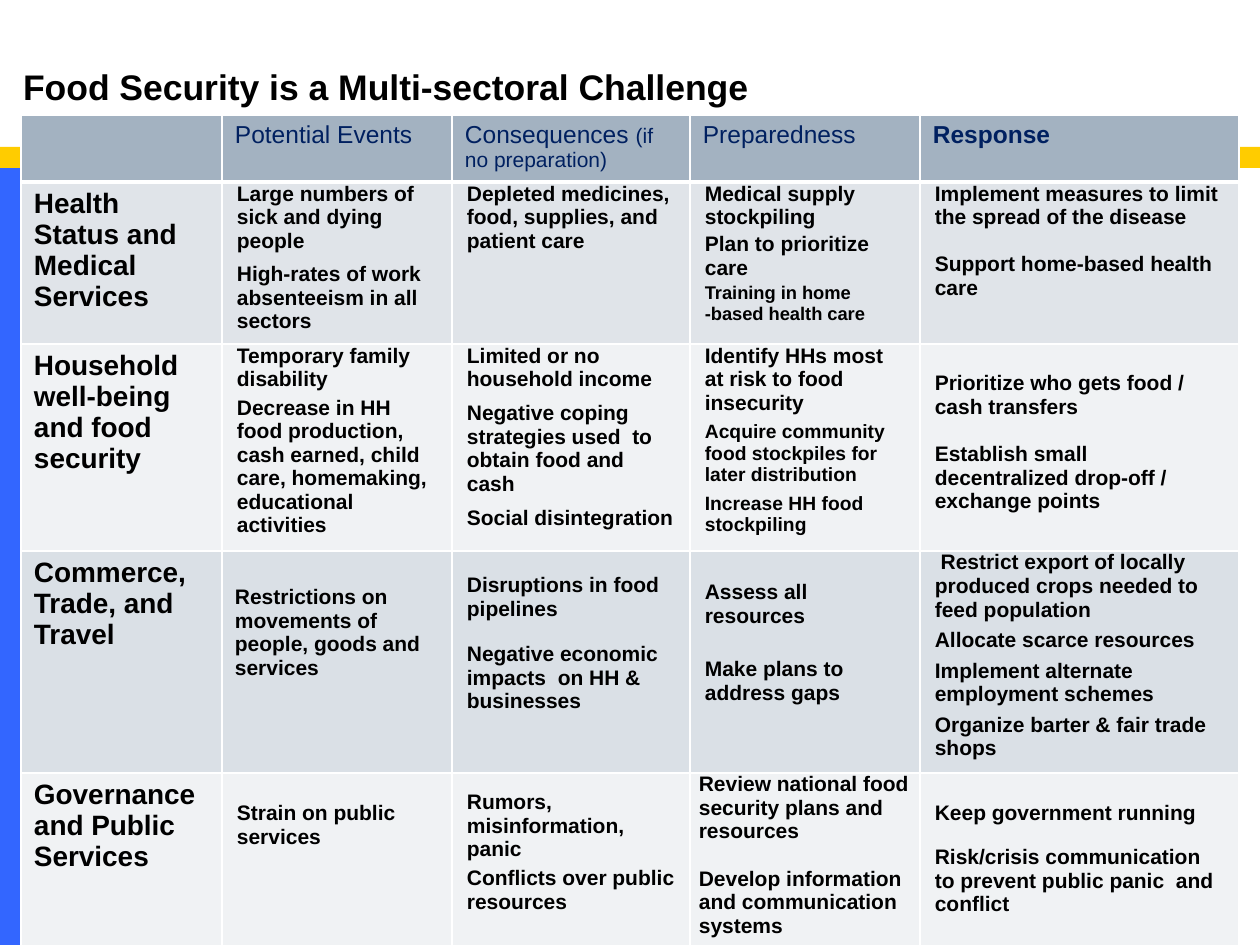
import dataclasses
import typing

import lxml.etree
import pptx
import pptx.dml.color
import pptx.enum.shapes
import pptx.enum.text
import pptx.oxml.ns
import pptx.util

EMU_PER_PX = 914400 / 126
FONT = "Arial"
BLACK, NAVY, WHITE = "000000", "002060", "FFFFFF"
HEADER_FILL = "A3B2C1"
COLUMN_WIDTHS = [201, 230, 238, 230, 319]
HEADER_HEIGHT = 67


@dataclasses.dataclass
class Entry:
    """The statements of one cell, with the gap between them in points."""

    statements: list[str]
    gap: float = 0
    top: int = 0
    side: int = 15
    sizes: tuple[float, ...] = (12, 12, 12, 12)


@dataclasses.dataclass
class Sector:
    """One row of the table."""

    name: str
    height: int
    fill: str
    entries: list[Entry]


@dataclasses.dataclass
class Heading:
    """One column heading."""

    label: str = ""
    remark: str = ""
    bold: bool = False


@dataclasses.dataclass
class Band:
    """One plain coloured bar of the background."""

    left: int
    top: int
    width: int
    height: int
    fill: str


BANDS = [Band(0, 147, 1260, 21, "FFCC00"), Band(0, 168, 21, 777, "3366FF")]

HEADINGS = [
    Heading(),
    Heading("Potential Events"),
    Heading("Consequences ", "(if no preparation)"),
    Heading("Preparedness"),
    Heading("Response", bold=True),
]

SECTORS = [
    Sector("Health Status and Medical Services", 162, "E0E4E9", [
        Entry(["Large numbers of sick and dying people",
               "High-rates of work absenteeism in all sectors"], 5.75),
        Entry(["Depleted medicines, food, supplies, and patient care"]),
        Entry(["Medical supply stockpiling", "Plan to prioritize care",
               "Training in home -based health care"], 2, sizes=(12, 12, 10.5)),
        Entry(["Implement measures to limit the spread of the disease",
               "Support home-based health care"], 13.5),
    ]),
    Sector("Household well-being and food security", 207, "F0F2F4", [
        Entry(["Temporary family disability",
               "Decrease in HH food production, cash earned, child care, "
               "homemaking, educational activities"], 3),
        Entry(["Limited or no household income",
               "Negative coping strategies used  to obtain food and cash",
               "Social disintegration"], 6),
        Entry(["Identify HHs most at risk to food insecurity",
               "Acquire community food stockpiles for later distribution",
               "Increase HH food stockpiling"], 4, sizes=(12, 11, 11)),
        Entry(["Prioritize who gets food / cash transfers",
               "Establish small decentralized drop-off / exchange points"], 13.5, top=28),
    ]),
    Sector("Commerce, Trade, and Travel", 222, "DAE0E6", [
        Entry(["Restrictions on movements of people, goods and services"], top=35, side=13),
        Entry(["Disruptions in food pipelines",
               "Negative economic  impacts  on HH & businesses"], 12.5, top=23),
        Entry(["Assess all resources", "Make plans to address gaps"], 17, top=30),
        Entry([" Restrict export of locally produced crops needed to feed population",
               "Allocate scarce resources", "Implement alternate employment schemes",
               "Organize barter & fair trade shops"], 4),
    ]),
    Sector("Governance and Public Services", 180, "F0F2F4", [
        Entry(["Strain on public services"], top=29),
        Entry(["Rumors, misinformation, panic", "Conflicts over public resources"], 3, top=18),
        Entry(["Review national food security plans and resources",
               "Develop information and communication systems"], 13.5, side=9),
        Entry(["Keep government running",
               "Risk/crisis communication to prevent public panic  and conflict"], 11.5, top=29),
    ]),
]


def px(length: int) -> int:
    """Turn pixels into EMU."""
    return round(length * EMU_PER_PX)


def color(value: str) -> pptx.dml.color.RGBColor:
    """Turn a hex string into a colour."""
    return pptx.dml.color.RGBColor.from_string(value)


def write(paragraph: typing.Any, text: str, *, size: float, fill: str = BLACK,
          bold: bool = True) -> None:
    """Add one formatted run to a paragraph."""
    run = paragraph.add_run()
    run.text = text
    run.font.name = FONT
    run.font.size = pptx.util.Pt(size)
    run.font.bold = bold
    run.font.color.rgb = color(fill)


def draw_band(slide: typing.Any, band: Band) -> None:
    """Draw one background bar."""
    bar = slide.shapes.add_shape(pptx.enum.shapes.MSO_SHAPE.RECTANGLE, px(band.left),
                                 px(band.top), px(band.width), px(band.height))
    bar.shadow.inherit = False
    bar.fill.solid()
    bar.fill.fore_color.rgb = color(band.fill)
    bar.line.fill.background()


def draw_title(slide: typing.Any, text: str) -> None:
    """Place and fill the title placeholder."""
    title = slide.shapes.title
    title.left, title.top, title.width, title.height = px(10), px(32), px(1103), px(84)
    frame = title.text_frame
    frame.word_wrap = True
    frame.auto_size = pptx.enum.text.MSO_AUTO_SIZE.NONE
    frame.vertical_anchor = pptx.enum.text.MSO_ANCHOR.BOTTOM
    frame.margin_left, frame.margin_bottom = px(13), px(8)
    frame.paragraphs[0].alignment = pptx.enum.text.PP_ALIGN.LEFT
    write(frame.paragraphs[0], text, size=20.3)


def style_cell(cell: typing.Any, fill: str, *, bottom: int = 1, side: int = 13,
               top: int = 6, foot: int = 6) -> None:
    """Set the borders, fill and margins of a cell."""
    properties = cell._tc.get_or_add_tcPr()
    for edge, width in {"lnL": 1, "lnR": 1, "lnT": 1, "lnB": bottom}.items():
        line = lxml.etree.SubElement(properties, pptx.oxml.ns.qn(f"a:{edge}"),
                                     w=str(pptx.util.Pt(width)))
        solid = lxml.etree.SubElement(line, pptx.oxml.ns.qn("a:solidFill"))
        lxml.etree.SubElement(solid, pptx.oxml.ns.qn("a:srgbClr"), val=WHITE)
    cell.fill.solid()
    cell.fill.fore_color.rgb = color(fill)
    cell.margin_left = cell.margin_right = px(side)
    cell.margin_top, cell.margin_bottom = px(top), px(foot)


def fill_heading(cell: typing.Any, heading: Heading) -> None:
    """Fill one cell of the header row."""
    style_cell(cell, HEADER_FILL, bottom=3)
    paragraph = cell.text_frame.paragraphs[0]
    for text, size in ((heading.label, 14), (heading.remark, 12)):
        if text:
            write(paragraph, text, size=size, fill=NAVY, bold=heading.bold)


def fill_entry(cell: typing.Any, entry: Entry, fill: str) -> None:
    """Fill one body cell with its statements."""
    style_cell(cell, fill, side=entry.side, top=entry.top, foot=0)
    frame = cell.text_frame
    for index, (statement, size) in enumerate(zip(entry.statements, entry.sizes)):
        paragraph = frame.add_paragraph() if index else frame.paragraphs[0]
        if index:
            paragraph.space_before = pptx.util.Pt(entry.gap)
        write(paragraph, statement, size=size)


def draw_table(slide: typing.Any) -> None:
    """Draw the table of sectors."""
    heights = [HEADER_HEIGHT] + [sector.height for sector in SECTORS]
    table = slide.shapes.add_table(len(heights), len(COLUMN_WIDTHS), px(21), px(115),
                                   px(sum(COLUMN_WIDTHS)), px(sum(heights))).table
    for column, width in zip(table.columns, COLUMN_WIDTHS):
        column.width = px(width)
    for row, height in zip(table.rows, heights):
        row.height = px(height)
    for index, heading in enumerate(HEADINGS):
        fill_heading(table.cell(0, index), heading)
    for row_index, sector in enumerate(SECTORS, start=1):
        name_cell = table.cell(row_index, 0)
        style_cell(name_cell, sector.fill)
        write(name_cell.text_frame.paragraphs[0], sector.name, size=16)
        for index, entry in enumerate(sector.entries, start=1):
            fill_entry(table.cell(row_index, index), entry, sector.fill)


def main() -> None:
    """Build the slide and save it."""
    deck = pptx.Presentation()
    deck.slide_width, deck.slide_height = px(1260), px(945)
    slide = deck.slides.add_slide(deck.slide_layouts[5])
    for band in BANDS:
        draw_band(slide, band)
    draw_title(slide, "Food Security is a Multi-sectoral Challenge")
    draw_table(slide)
    deck.save("out.pptx")


if __name__ == "__main__":
    main()
